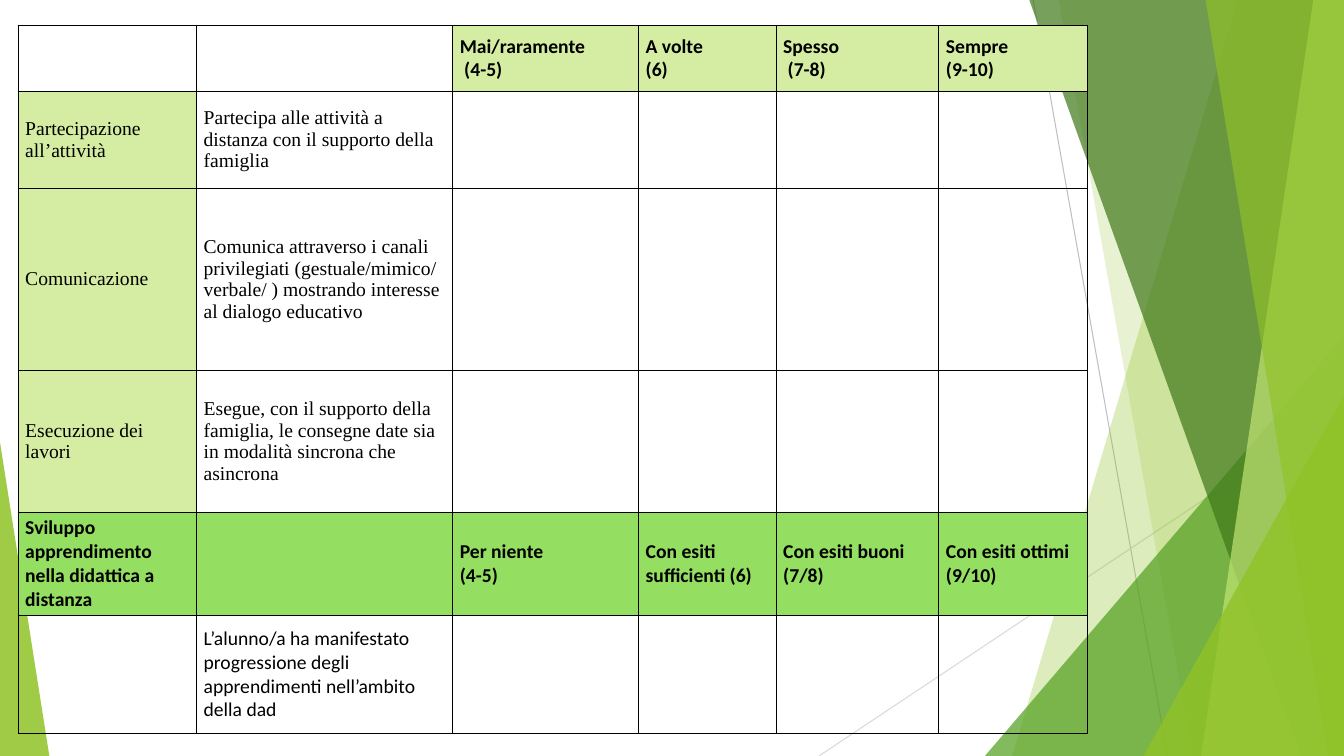
from lxml import etree
from pptx import Presentation
from pptx import util as u
from pptx.dml.color import RGBColor
from pptx.enum import shapes, text
from pptx.oxml.ns import qn

EMU_PER_PX = 9525
WIDTH, HEIGHT = 1280, 720
LIME, PALE, BRIGHT = "90C226", "D5EDA2", "94DE61"
SANS, SERIF = "Calibri", "Times New Roman"

RAYS = [((984, 0), (1112, 720), "BFBFBF"), ((1280, 387), (780, 720), "D9D9D9")]
BACK_BANDS = [(1179, 964, LIME, 30), (1008, 1136, LIME, 20)]
FRONT_BANDS = [(980, 1239, "3F7819", 70), (1251, 1144, "C0E474", 70), (1148, 1265, LIME, 65)]
BACK_WEDGE = (938, 320, 342, 400, 1, "54A021", 72)
FRONT_WEDGES = [(1089, 377, 191, 343, 1, LIME, 80), (0, 421, 47, 299, 0, LIME, 85)]

COLUMNS = [170, 244, 177, 131, 155, 142]
ROWS = [63, 92, 174, 135, 98, 113]
CONTENT = [
    ["", "", "Mai/raramente\n (4-5)", "A volte\n(6)", "Spesso\n (7-8)", "Sempre\n(9-10)"],
    ["Partecipazione all’attività",
     "Partecipa alle attività a distanza con il supporto della famiglia"],
    ["Comunicazione",
     "Comunica attraverso i canali privilegiati (gestuale/mimico/ verbale/ ) "
     "mostrando interesse al dialogo educativo"],
    ["Esecuzione dei lavori",
     "Esegue, con il supporto della famiglia, le consegne date sia in modalità "
     "sincrona che asincrona"],
    ["Sviluppo apprendimento nella didattica a distanza", "", "Per niente\n(4-5)",
     "Con esiti sufficienti (6)", "Con esiti buoni\n(7/8)", "Con esiti ottimi\n(9/10)"],
    ["", "L’alunno/a ha manifestato progressione degli apprendimenti nell’ambito della dad"],
]
ROW_FONTS = [(SANS, True), (SERIF, False), (SERIF, False), (SERIF, False),
             (SANS, True), (SANS, False)]


def px(length):
    """Turn pixels into EMU."""
    return u.Emu(length * EMU_PER_PX)


def color(code):
    """Turn a hex string into a colour."""
    return RGBColor.from_string(code)


def paint(shape, code, opacity):
    """Give a shape a translucent fill without line or shadow."""
    shape.shadow.inherit = False
    shape.line.fill.background()
    shape.fill.solid()
    shape.fill.fore_color.rgb = color(code)
    tint = shape.fill._xPr.find(qn("a:solidFill"))[0]
    etree.SubElement(tint, qn("a:alpha"), val=str(opacity * 1000))


def add_ray(page, start, end, code):
    """Draw a thin straight line."""
    ray = page.shapes.add_connector(shapes.MSO_CONNECTOR.STRAIGHT,
                                    *map(px, start + end))
    ray.line.color.rgb = color(code)
    ray.line.width = u.Pt(0.75)
    etree.SubElement(ray._element.spPr, qn("a:effectLst"))


def add_band(page, top_x, bottom_x, code, opacity):
    """Draw a full-height band that reaches the right edge."""
    builder = page.shapes.build_freeform(top_x, -1, scale=EMU_PER_PX)
    builder.add_line_segments([(WIDTH, -1), (WIDTH, HEIGHT), (bottom_x, HEIGHT)])
    paint(builder.convert_to_shape(), code, opacity)


def add_wedge(page, left, top, width, height, apex, code, opacity):
    """Draw a triangle with its apex at the given share of its width."""
    wedge = page.shapes.add_shape(shapes.MSO_SHAPE.ISOSCELES_TRIANGLE,
                                  *map(px, (left, top, width, height)))
    wedge.adjustments[0] = apex
    paint(wedge, code, opacity)


def outline(cell):
    """Give a cell thin black borders."""
    properties = cell._tc.get_or_add_tcPr()
    for side in ("a:lnL", "a:lnR", "a:lnT", "a:lnB"):
        border = etree.SubElement(properties, qn(side), w=str(u.Pt(0.48)))
        fill = etree.SubElement(border, qn("a:solidFill"))
        etree.SubElement(fill, qn("a:srgbClr"), val="000000")


def cell_fill(row, column):
    """Return the fill colour of a cell, or None."""
    if row == 4:
        return BRIGHT
    if (row == 0 and column > 1) or (row in (1, 2, 3) and column == 0):
        return PALE
    return None


def write(cell, words, font_name, bold):
    """Set the text and font of a cell."""
    cell.text = words
    for para in cell.text_frame.paragraphs:
        para.font.name = font_name
        para.font.size = u.Pt(14)
        para.font.bold = bold
        para.font.color.rgb = color("000000")


def style(cell, code):
    """Set borders, fill, margins and anchor of a cell."""
    outline(cell)
    if code:
        cell.fill.solid()
        cell.fill.fore_color.rgb = color(code)
    else:
        cell.fill.background()
    cell.margin_left = cell.margin_right = px(7)
    cell.margin_top = cell.margin_bottom = px(3)
    cell.vertical_anchor = text.MSO_ANCHOR.MIDDLE


def add_rubric(page):
    """Add the assessment table."""
    table = page.shapes.add_table(len(ROWS), len(COLUMNS), px(17), px(24),
                                  px(sum(COLUMNS)), px(sum(ROWS))).table
    table.first_row = table.horz_banding = False
    for column, width in zip(table.columns, COLUMNS):
        column.width = px(width)
    for row, height in zip(table.rows, ROWS):
        row.height = px(height)
    for row in range(len(ROWS)):
        for column in range(len(COLUMNS)):
            style(table.cell(row, column), cell_fill(row, column))
        for column, words in enumerate(CONTENT[row]):
            if words:
                write(table.cell(row, column), words, *ROW_FONTS[row])


def main():
    """Build the slide and save it."""
    deck = Presentation()
    deck.slide_width, deck.slide_height = px(WIDTH), px(HEIGHT)
    page = deck.slides.add_slide(deck.slide_layouts[6])
    for ray in RAYS:
        add_ray(page, *ray)
    for band in BACK_BANDS:
        add_band(page, *band)
    add_wedge(page, *BACK_WEDGE)
    for band in FRONT_BANDS:
        add_band(page, *band)
    for wedge in FRONT_WEDGES:
        add_wedge(page, *wedge)
    add_rubric(page)
    deck.save("out.pptx")


if __name__ == "__main__":
    main()
